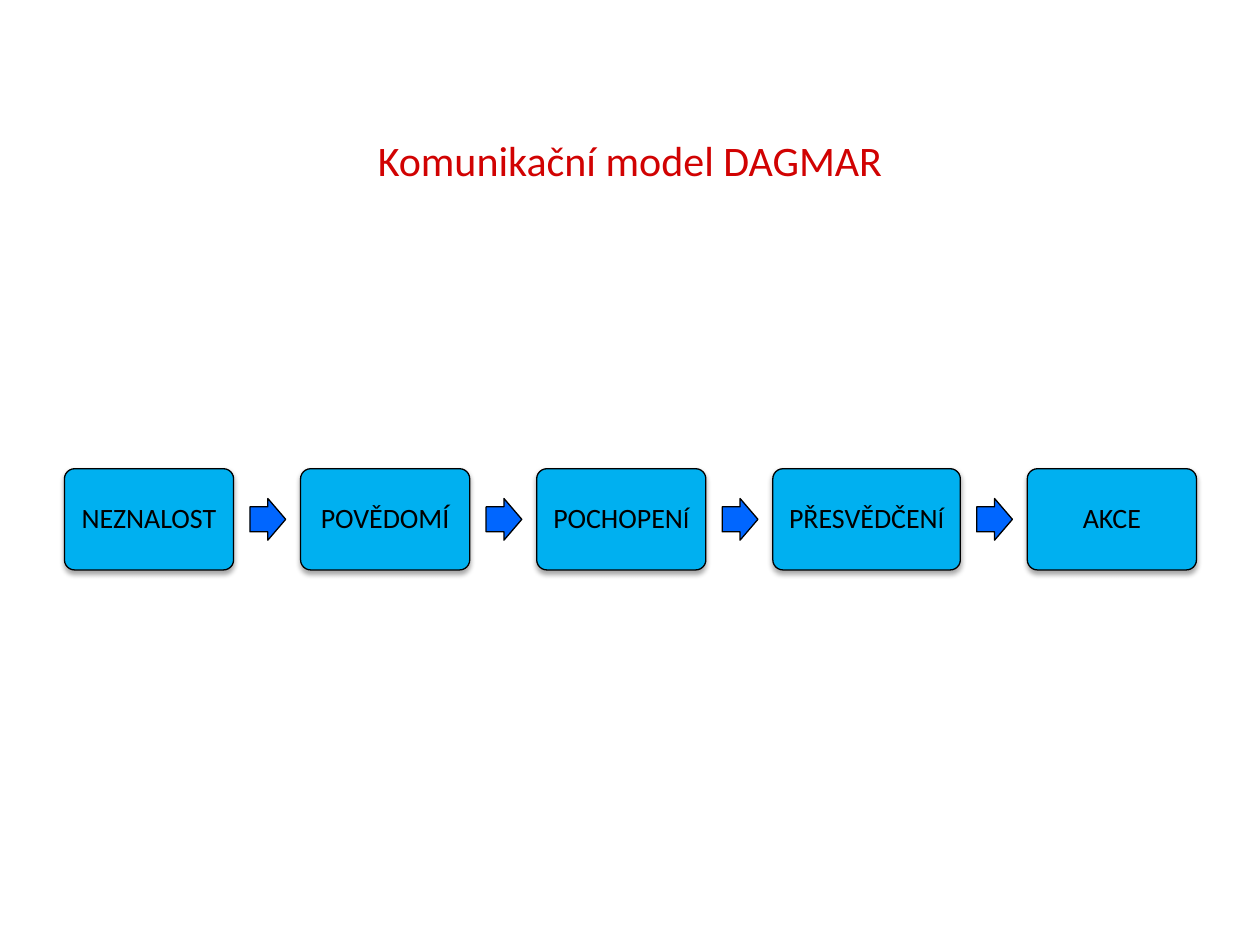
import pptx
import pptx.dml.color
import pptx.enum.shapes
import pptx.enum.text
import pptx.oxml
import pptx.oxml.ns
import pptx.util

Cm = pptx.util.Cm
Pt = pptx.util.Pt
SHAPES = pptx.enum.shapes.MSO_SHAPE

COLORS = {
    "title": "D10202",
    "box": "00B0F0",
    "arrow": "0066FF",
    "ink": "000000",
}


def write_text(text_frame, text, size=16, color="ink", margin=0.23, spacing=0.9, last_size=None):
    text_frame.word_wrap = True
    text_frame.vertical_anchor = pptx.enum.text.MSO_ANCHOR.MIDDLE
    text_frame.margin_left = text_frame.margin_right = Cm(margin)
    text_frame.margin_top = text_frame.margin_bottom = Cm(margin)
    paragraph = text_frame.paragraphs[0]
    paragraph.alignment = pptx.enum.text.PP_ALIGN.CENTER
    paragraph.line_spacing = spacing
    parts = [(text[:-1], size), (text[-1], last_size)] if last_size else [(text, size)]
    for part, part_size in parts:
        run = paragraph.add_run()
        run.text = part
        run.font.name = "Calibri"
        run.font.size = Pt(part_size)
        run.font.color.rgb = pptx.dml.color.RGBColor.from_string(COLORS[color])


def add_flow_shape(slide, kind, left, top, width, height, color, adjustments):
    shape = slide.shapes.add_shape(kind, Cm(left), Cm(top), Cm(width), Cm(height))
    shape.shadow.inherit = False
    shape.fill.solid()
    shape.fill.fore_color.rgb = pptx.dml.color.RGBColor.from_string(COLORS[color])
    shape.line.color.rgb = pptx.dml.color.RGBColor.from_string(COLORS["ink"])
    shape.line.width = Pt(0.75)
    for index, value in enumerate(adjustments):
        shape.adjustments[index] = value
    return shape


presentation = pptx.Presentation()
presentation.slide_width = Cm(25.4)
presentation.slide_height = Cm(19.05)
slide = presentation.slides.add_slide(presentation.slide_layouts[5])

title = slide.shapes.title
title.left, title.top, title.width, title.height = Cm(1.27), Cm(2.21), Cm(22.86), Cm(2.03)
write_text(title.text_frame, "Komunikační model DAGMAR", size=24, color="title", margin=0.13, spacing=1)

stages = [
    ("NEZNALOST", 3.41, None),
    ("POVĚDOMÍ", 3.41, None),
    ("POCHOPENÍ", 3.41, 14),
    ("PŘESVĚDČENÍ", 3.78, 14),
    ("AKCE", 3.41, None),
]
middle = 10.47
box_height = 2.04
arrow_width, arrow_height = 0.72, 0.84
arrow_offset = 0.33
gap = 1.35
shadow_xml = (
    f'<a:outerShdw {pptx.oxml.ns.nsdecls("a")} blurRad="{Pt(3.1)}" dist="{Pt(1.8)}" '
    'dir="5400000" rotWithShape="0">'
    f'<a:srgbClr val="{COLORS["ink"]}"><a:alpha val="35000"/></a:srgbClr></a:outerShdw>'
)

left = 1.3
for number, (name, width, last_size) in enumerate(stages, start=1):
    box = add_flow_shape(slide, SHAPES.ROUNDED_RECTANGLE, left, middle - box_height / 2,
                         width, box_height, "box", [0.1])
    effects = box._element.spPr.find(pptx.oxml.ns.qn("a:effectLst"))
    effects.append(pptx.oxml.parse_xml(shadow_xml))
    write_text(box.text_frame, name, last_size=last_size)
    if number < len(stages):
        add_flow_shape(slide, SHAPES.RIGHT_ARROW, left + width + arrow_offset, middle - arrow_height / 2,
                       arrow_width, arrow_height, "arrow", [0.6, 0.5])
    left += width + gap

presentation.save("out.pptx")
